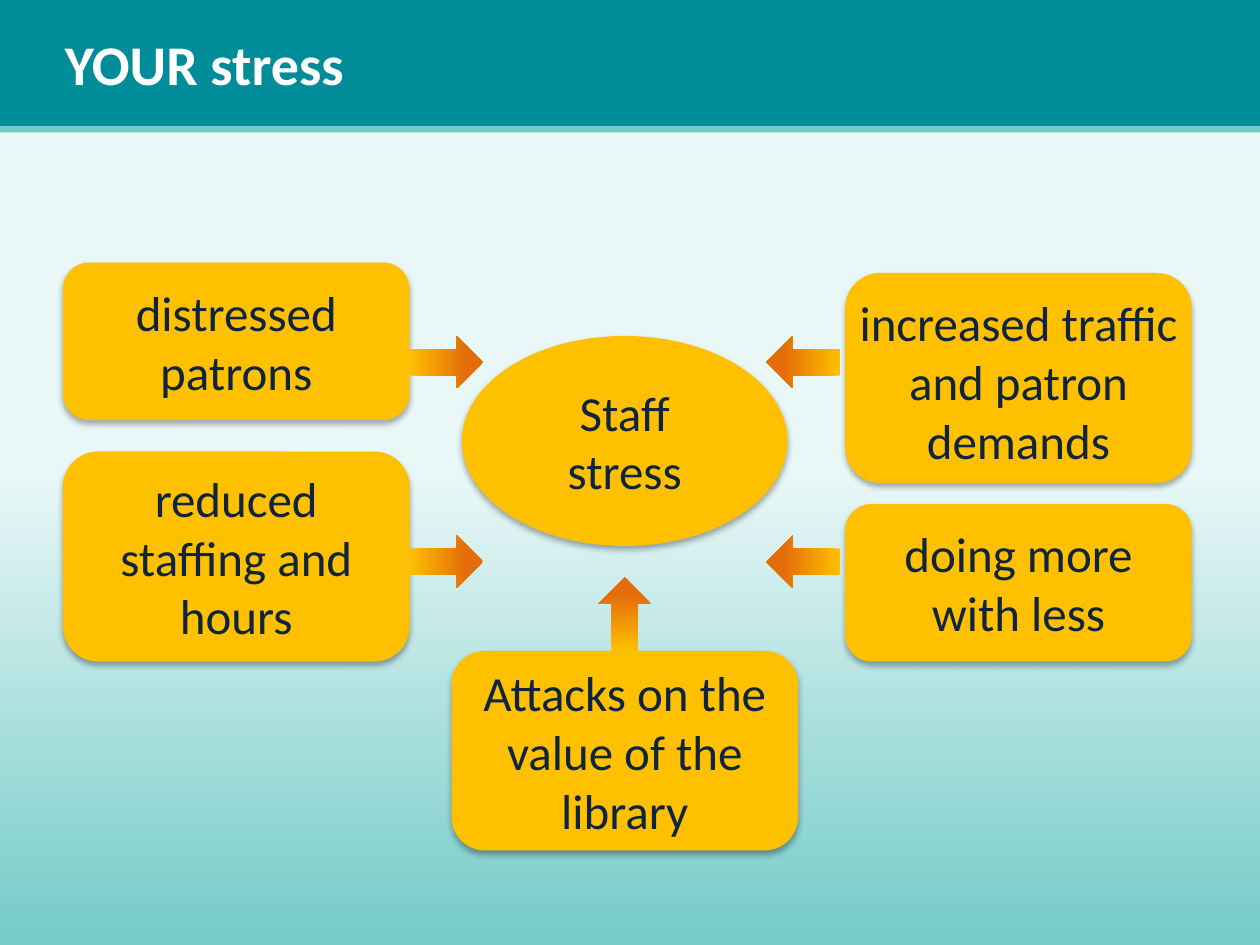
from lxml import etree
from pptx import Presentation
from pptx import util as u
from pptx.dml.color import RGBColor
from pptx.enum import shapes, text
from pptx.oxml.ns import qn

COLORS = {
    "teal": "008C99", "aqua": "74CBC8", "mist": "E9F7F7", "white": "FFFFFF",
    "amber": "FFC000", "orange": "E46C0A", "navy": "0F243E", "black": "000000",
}
KIND = shapes.MSO_SHAPE
LEFT, MIDDLE, RIGHT = 36, 258, 483
CARD_WIDTH = 198
TITLE = "YOUR stress"
CENTER = ("Staff stress", 264, 192, 186, 120)
CARDS = [
    ("Attacks on the value of the library", MIDDLE, 372, 114, {}),
    ("reduced staffing and hours", LEFT, 258, 120, {}),
    ("distressed patrons", LEFT, 150, 90, {}),
    ("increased traffic and patron demands", RIGHT, 156, 120, {"insets": (0, 3.6, 0, 0)}),
    ("doing more with less", RIGHT, 288, 90, {}),
]
ARROW_SIZE = (42, 30)
ARROWS = [
    (234, 192, {}),
    (234, 306, {}),
    (438, 192, {"flip": True}),
    (438, 306, {"flip": True}),
    (336, 336, {"turn": 270}),
]


def color(name):
    return RGBColor.from_string(COLORS[name])


def paint_gradient(fill, angle, *stops):
    fill.gradient()
    fill.gradient_angle = angle
    for stop, (position, name) in zip(fill.gradient_stops, stops):
        stop.position = position
        stop.color.rgb = color(name)


def add_plain(page, kind, left, top, width, height, fill=None):
    shape = page.shapes.add_shape(kind, *map(u.Pt, (left, top, width, height)))
    shape.shadow.inherit = False
    shape.line.fill.background()
    if fill:
        shape.fill.solid()
        shape.fill.fore_color.rgb = color(fill)
    return shape


def add_shadow(shape):
    effects = shape._element.spPr.find(qn("a:effectLst"))
    shadow = etree.SubElement(
        effects, qn("a:outerShdw"), blurRad=str(u.Pt(3.5)), dist=str(u.Pt(2.2)),
        dir="5400000", rotWithShape="0")
    tint = etree.SubElement(shadow, qn("a:srgbClr"), val=COLORS["black"])
    etree.SubElement(tint, qn("a:alpha"), val="32000")


def write(box, words, size=28, tone="navy", bold=False,
          align=text.PP_ALIGN.CENTER, insets=(7.2, 3.6, 7.2, 3.6)):
    frame = box.text_frame
    frame.word_wrap = True
    frame.vertical_anchor = text.MSO_ANCHOR.MIDDLE
    (frame.margin_left, frame.margin_top,
     frame.margin_right, frame.margin_bottom) = map(u.Pt, insets)
    para = frame.paragraphs[0]
    para.alignment = align
    span = para.add_run()
    span.text = words
    span.font.name = "Calibri"
    span.font.size = u.Pt(size)
    span.font.bold = bold
    span.font.color.rgb = color(tone)


def add_arrow(page, left, top, flip=False, turn=0):
    arrow = add_plain(page, KIND.RIGHT_ARROW, left, top, *ARROW_SIZE)
    paint_gradient(arrow.fill, 0, (0, "amber"), (0.78, "orange"))
    arrow.rotation = turn
    if flip:
        arrow._element.spPr.xfrm.set("flipH", "1")


def main():
    deck = Presentation()
    deck.slide_width, deck.slide_height = u.Pt(720), u.Pt(540)
    page = deck.slides.add_slide(deck.slide_layouts[6])
    paint_gradient(page.background.fill, 90, (0, "aqua"), (0.5, "mist"))

    add_plain(page, KIND.RECTANGLE, 0, 0, 720, 72, "teal")
    add_plain(page, KIND.RECTANGLE, 0, 72, 720, 3.6, "aqua")
    title = page.shapes.add_textbox(*map(u.Pt, (30, 6, 648, 60)))
    write(title, TITLE, size=32, tone="white", bold=True, align=text.PP_ALIGN.LEFT)

    words, *place = CENTER
    center = add_plain(page, KIND.OVAL, *place, "amber")
    add_shadow(center)
    write(center, words)

    for words, left, top, height, style in CARDS:
        card = add_plain(page, KIND.ROUNDED_RECTANGLE, left, top, CARD_WIDTH, height, "amber")
        add_shadow(card)
        write(card, words, **style)

    for left, top, pose in ARROWS:
        add_arrow(page, left, top, **pose)

    deck.save("out.pptx")


if __name__ == "__main__":
    main()
